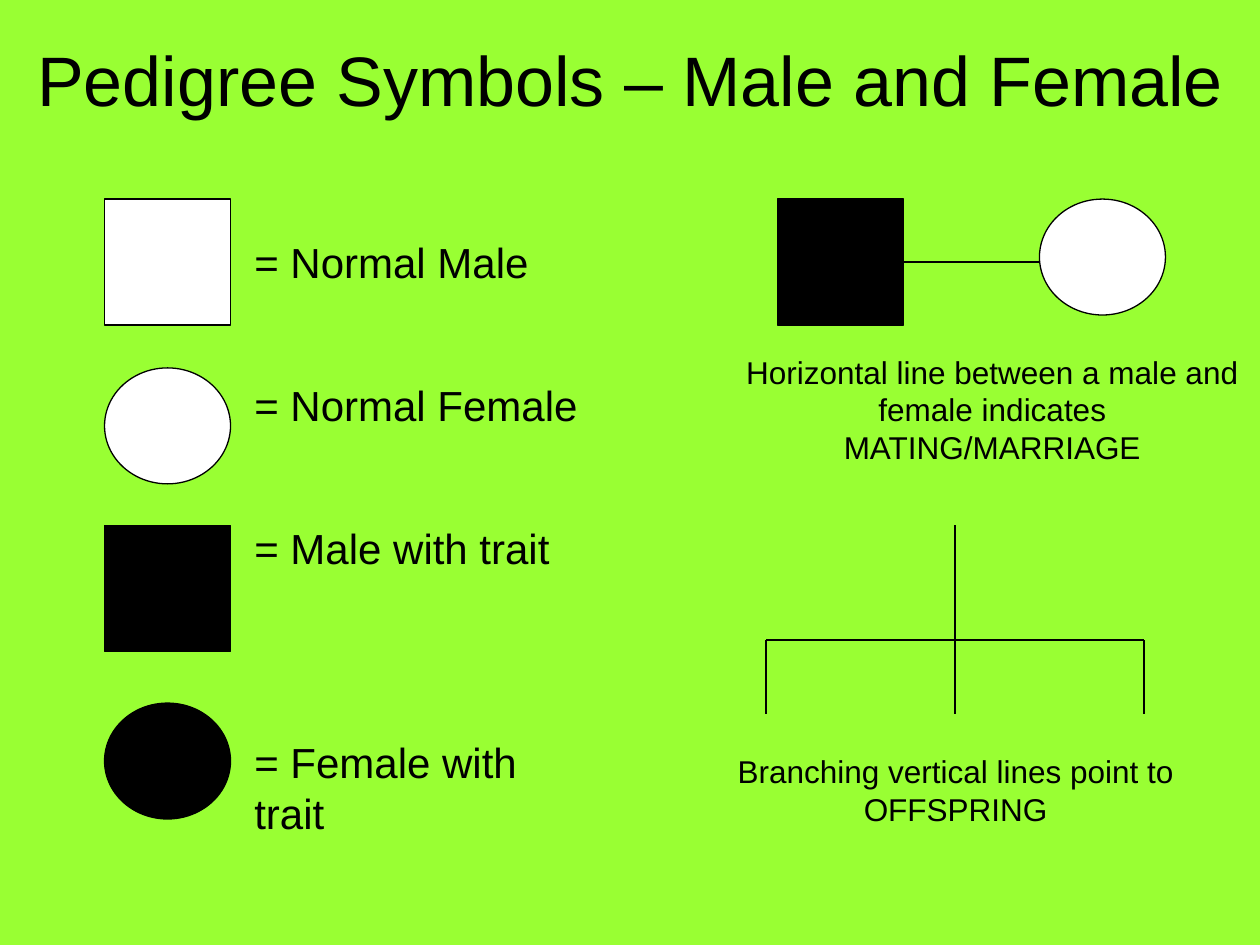
from lxml.etree import SubElement
from pptx import Presentation
from pptx.dml.color import RGBColor
from pptx.enum.shapes import MSO_CONNECTOR, MSO_SHAPE
from pptx.enum.text import MSO_ANCHOR, MSO_AUTO_SIZE, PP_ALIGN
from pptx.oxml.ns import qn
from pptx.util import Inches, Pt

BLACK = "000000"
WHITE = "FFFFFF"
GREEN = "99FF33"


def paint(fill, color):
    fill.solid()
    fill.fore_color.rgb = RGBColor.from_string(color)


def add_text(slide, lines, left, top, width, height, size=18,
             align=PP_ALIGN.CENTER, anchor=MSO_ANCHOR.TOP, gaps=(0,),
             fit=MSO_AUTO_SIZE.SHAPE_TO_FIT_TEXT):
    box = slide.shapes.add_textbox(
        Inches(left), Inches(top), Inches(width), Inches(height))
    frame = box.text_frame
    frame.word_wrap = True
    frame.auto_size = fit
    frame.vertical_anchor = anchor
    frame.text = "\n".join(lines)
    for para, gap in zip(frame.paragraphs, gaps):
        para.alignment = align
        para.space_before = Pt(gap)
        font = para.runs[0].font
        font.name = "Arial"
        font.size = Pt(size)
        font.color.rgb = RGBColor.from_string(BLACK)


def add_symbol(slide, kind, left, top, color):
    height = 1 if kind == MSO_SHAPE.RECTANGLE else 0.92
    symbol = slide.shapes.add_shape(
        kind, Inches(left), Inches(top), Inches(1), Inches(height))
    symbol.shadow.inherit = False
    paint(symbol.fill, color)
    paint(symbol.line.fill, BLACK)
    symbol.line.width = Pt(0.75)
    return symbol


def add_line(slide, x1, y1, x2, y2):
    line = slide.shapes.add_connector(
        MSO_CONNECTOR.STRAIGHT, Inches(x1), Inches(y1), Inches(x2), Inches(y2))
    paint(line.line.fill, BLACK)
    line.line.width = Pt(0.75)
    SubElement(line._element.spPr, qn("a:effectLst"))
    return line


def add_legend(slide):
    male, female = MSO_SHAPE.RECTANGLE, MSO_SHAPE.OVAL
    symbols = [(male, 1.58, WHITE), (female, 2.92, WHITE),
               (male, 4.17, BLACK), (female, 5.58, BLACK)]
    for kind, top, color in symbols:
        add_symbol(slide, kind, 0.83, top, color)
    labels = ["= Normal Male", "= Normal Female",
              "= Male with trait", "= Female with trait"]
    add_text(slide, labels, 1.92, 1.83, 2.92, 5.09, size=24,
             align=PP_ALIGN.LEFT, gaps=(0, 52.8, 52.8, 93.6))


def add_couple(slide):
    male = add_symbol(slide, MSO_SHAPE.RECTANGLE, 6.17, 1.58, BLACK)
    add_symbol(slide, MSO_SHAPE.OVAL, 8.25, 1.58, WHITE)
    add_line(slide, 7.17, 2.08, 8.25, 2.08).begin_connect(male, 3)
    add_text(slide, ["Horizontal line between a male and female "
                     "indicates MATING/MARRIAGE"], 5.75, 2.75, 4.25, 1)


def add_branch(slide):
    left, mid, right = 6.08, 7.58, 9.08
    bar, foot = 5.08, 5.67
    add_line(slide, mid, 4.17, mid, foot)
    add_line(slide, left, bar, right, bar)
    for x in (left, right):
        add_line(slide, x, bar, x, foot)
    add_text(slide, ["Branching vertical lines point to OFFSPRING"],
             5.67, 5.92, 3.83, 0.7)


def main():
    deck = Presentation()
    deck.slide_width = Inches(10)
    deck.slide_height = Inches(7.5)
    slide = deck.slides.add_slide(deck.slide_layouts[6])
    paint(slide.background.fill, GREEN)
    add_text(slide, ["Pedigree Symbols – Male and Female"], 0, 0, 10, 1.25,
             size=40, anchor=MSO_ANCHOR.MIDDLE, fit=MSO_AUTO_SIZE.NONE)
    add_legend(slide)
    add_couple(slide)
    add_branch(slide)
    deck.save("out.pptx")


if __name__ == "__main__":
    main()
